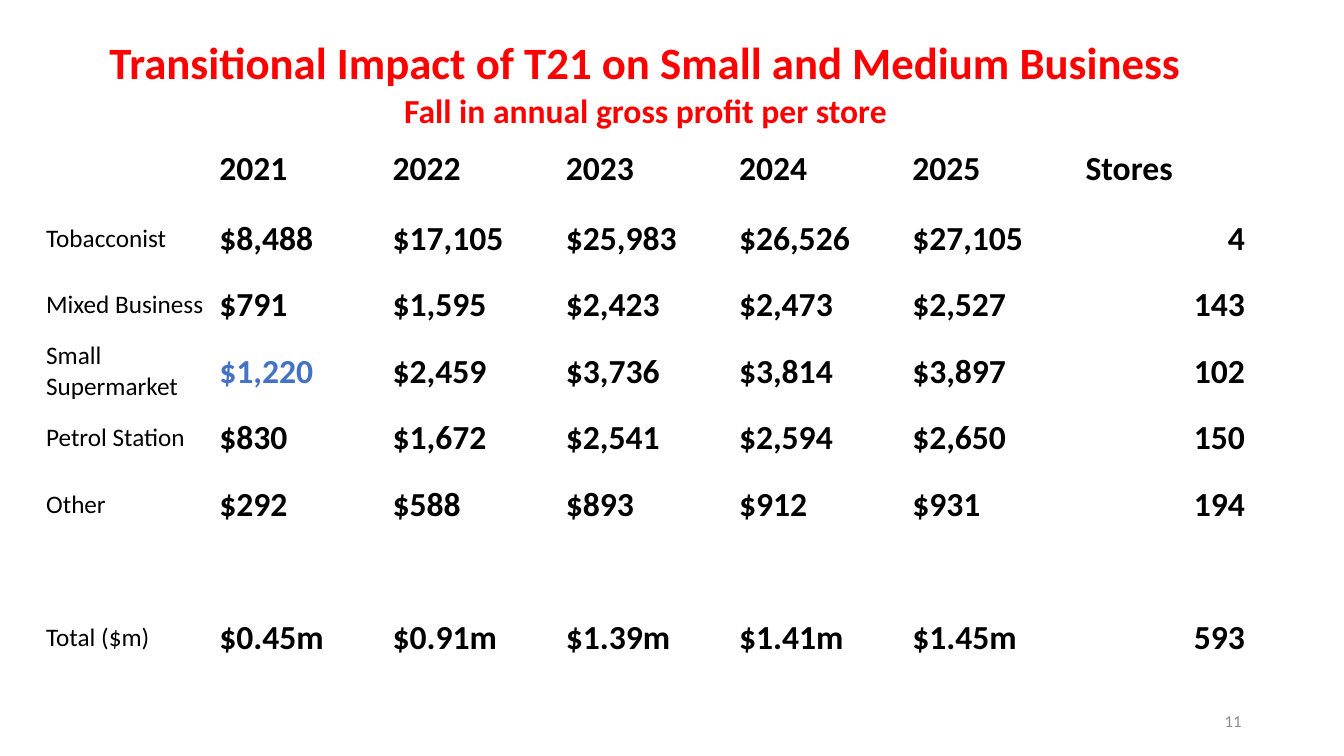
from pptx import Presentation
from pptx.dml.color import RGBColor
from pptx.enum.text import MSO_ANCHOR as Anchor, PP_ALIGN as Align
from pptx.oxml import parse_xml
from pptx.oxml.ns import nsdecls
from pptx.util import Pt

TITLE = [("Transitional Impact of T21 on Small and Medium Business", 32),
         ("Fall in annual gross profit per store", 24)]
HEADINGS = ("", "2021", "2022", "2023", "2024", "2025", "Stores")
STORES = [
    ("Tobacconist", "$8,488", "$17,105", "$25,983", "$26,526", "$27,105", "4"),
    ("Mixed Business", "$791", "$1,595", "$2,423", "$2,473", "$2,527", "143"),
    ("Small Supermarket", "$1,220", "$2,459", "$3,736", "$3,814", "$3,897", "102"),
    ("Petrol Station", "$830", "$1,672", "$2,541", "$2,594", "$2,650", "150"),
    ("Other", "$292", "$588", "$893", "$912", "$931", "194"),
]
TOTAL = ("Total ($m)", "$0.45m", "$0.91m", "$1.39m", "$1.41m", "$1.45m", "593")
BLANK = ("",) * len(HEADINGS)
ROWS = [BLANK, HEADINGS, *STORES, BLANK, TOTAL, BLANK]
HIGHLIGHT = "$1,220"
PAGE = "11"

RED, BLACK, BLUE, GREY, WHITE = "FF0000", "000000", "4472C4", "8C8C8C", "FFFFFF"
LEFT, TOP, COL_W = 28, 26.6, 123.75
ROW_H = [67.2, 51.8] + [47.5] * (len(ROWS) - 2)


def style(p, size, color, bold=False, align=Align.LEFT):
    p.alignment = align
    p.font.name = "Calibri"
    p.font.size = Pt(size)
    p.font.bold = bold
    p.font.color.rgb = RGBColor.from_string(color)


def set_borders(cell, bottom):
    widths = {"L": 1, "R": 1, "T": 1, "B": bottom}
    for i, (side, width) in enumerate(widths.items()):
        cell._tc.get_or_add_tcPr().insert(i, parse_xml(
            f'<a:ln{side} {nsdecls("a")} w="{Pt(width)}"><a:solidFill>'
            f'<a:srgbClr val="{WHITE}"/></a:solidFill></a:ln{side}>'))


prs = Presentation()
prs.slide_width, prs.slide_height = Pt(960), Pt(540)
s = prs.slides.add_slide(prs.slide_layouts[6])

# Table frame
table = s.shapes.add_table(len(ROWS), len(HEADINGS), Pt(LEFT), Pt(TOP),
                           Pt(COL_W * len(HEADINGS)), Pt(sum(ROW_H))).table
table.first_row = table.horz_banding = False
for column in table.columns:
    column.width = Pt(COL_W)
for row, height in zip(table.rows, ROW_H):
    row.height = Pt(height)

# Cells
for r, values in enumerate(ROWS):
    for c, text in enumerate(values):
        cell = table.cell(r, c)
        cell.fill.background()
        set_borders(cell, bottom=3 if r == 0 else 1)
        cell.margin_left = cell.margin_right = Pt(5)
        cell.margin_top = cell.margin_bottom = 0
        cell.vertical_anchor = Anchor.MIDDLE
        cell.text = text
        is_count = r > 1 and c == len(HEADINGS) - 1
        style(cell.text_frame.paragraphs[0], 24 if c else 18,
              BLUE if text == HIGHLIGHT else BLACK, bold=c > 0,
              align=Align.RIGHT if is_count else Align.LEFT)

# Title across the top row
title = table.cell(0, 0)
title.merge(table.cell(0, len(HEADINGS) - 1))
title.vertical_anchor = Anchor.BOTTOM
title.text = "\n".join(text for text, _ in TITLE)
for p, (_, size) in zip(title.text_frame.paragraphs, TITLE):
    style(p, size, RED, bold=True, align=Align.CENTER)

# Page number
tf = s.shapes.add_textbox(Pt(678), Pt(500.5), Pt(216), Pt(28.75)).text_frame
tf.word_wrap = True
tf.vertical_anchor = Anchor.MIDDLE
tf.text = PAGE
style(tf.paragraphs[0], 12, GREY, align=Align.RIGHT)

prs.save("out.pptx")
